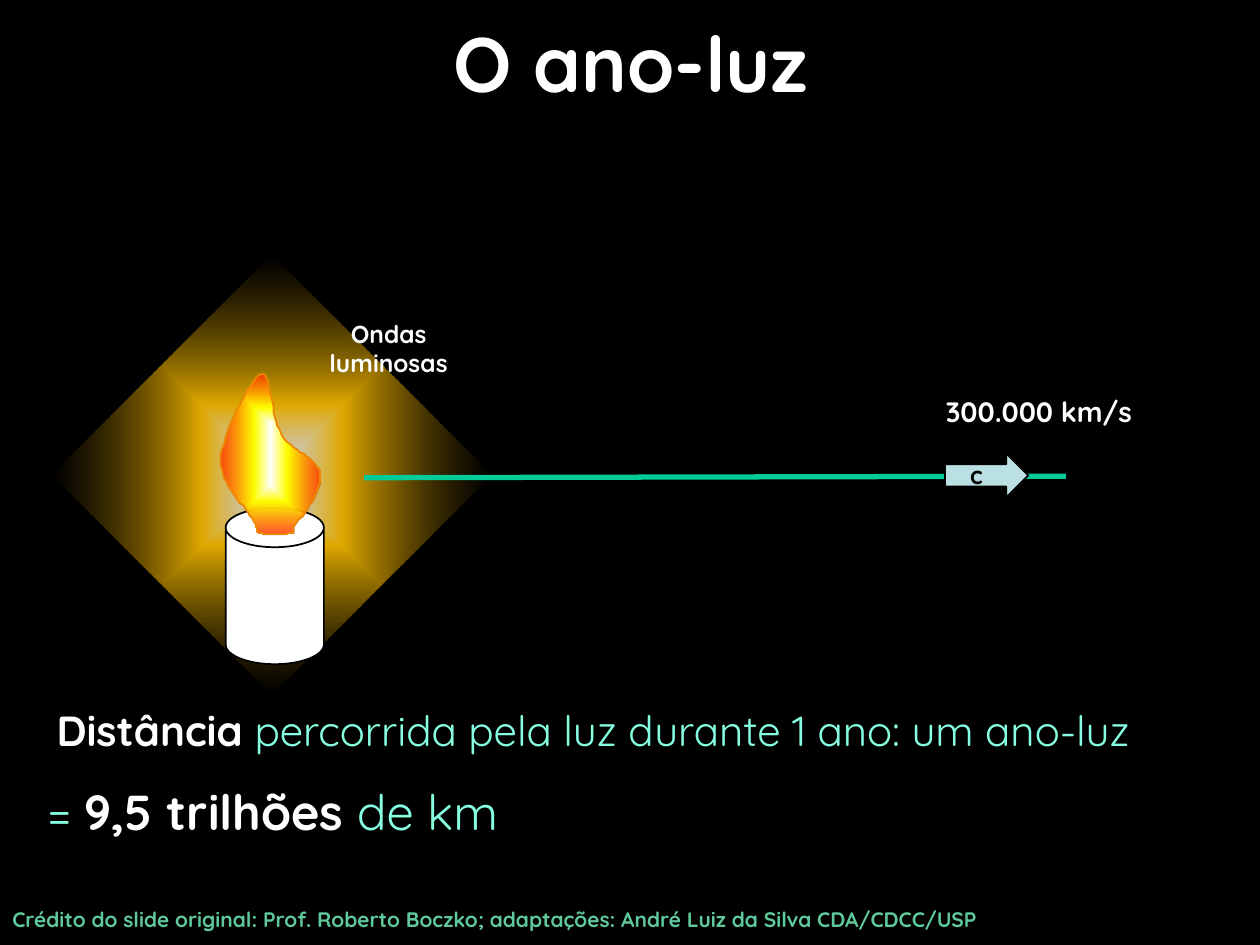
from lxml import etree
from pptx import Presentation
from pptx import util as u
from pptx.dml.color import RGBColor
from pptx.enum import shapes, text
from pptx.oxml import ns, parse_xml

THEME = dict(
    font="Quicksand", back="000000", white="FFFFFF", black="000000",
    mint="85FFE0", green="60C99C", ray="00CC99", arrow="BBE0E3", rim="EE8800",
    title=44, value=28, body=24, speed=16, label=14, credit=12,
)

# Text: box in cm, size, alignment, wrap, paragraphs of (words, colour, bold)
TEXTS = [
    ((0.28, 0.18, 24.89, 2.13), "title", "CENTER", True,
     [[("O ano-luz", "white", True)]]),
    ((6.35, 6.3, 2.97, 1.47), "label", "CENTER", False,
     [[("Ondas", "white", True)], [("luminosas", "white", True)]]),
    ((19.28, 9.14, 0.81, 0.86), "label", "CENTER", False,
     [[("c", "black", True)]]),
    ((18.82, 7.82, 4.62, 0.94), "speed", "LEFT", True,
     [[("300.000 km/s", "white", True)]]),
    ((0, 18.16, 25.4, 0.76), "credit", "LEFT", True,
     [[("Crédito do slide original: Prof. Roberto Boczko; adaptações: "
        "André Luiz da Silva CDA/CDCC/USP", "green", True)]]),
    ((0.89, 14.07, 23.47, 1.3), "body", "LEFT", True,
     [[("Distância ", "white", True),
       ("percorrida pela luz durante 1 ano: um ano-luz", "mint", False)]]),
    ((0.71, 15.62, 10.34, 1.45), "value", "LEFT", False,
     [[("= ", "mint", False), ("9,5 trilhões ", "white", True),
       ("de km", "mint", False)]]),
]

# Shapes: boxes in cm, gradient stops as (place, colour, opacity) in percent
GLOW = (2.34, 6.43, 6.27, 6.27)
GLOW_STOPS = [(7, "FFFFFF", 79), (32, "FFC000", 87), (100, "000000", 44)]
CANDLE = (4.55, 10.24, 1.98, 3.15)
ARROW = (19.05, 9.14, 1.68, 0.89)
RAY = (21.49, 9.6, 7.34, 9.63)
FLAME_STOPS = [(0, "FFFFFF", 100), (33, "FFFF00", 100), (100, "FF3300", 83)]

# Flame outline: start, then Bézier curves, in hundredths of an inch
UNIT = u.Cm(0.0254)
START = (233, 418)
CURVES = [
    ((245, 403), (256, 388), (254, 376)),
    ((253, 364), (230, 357), (223, 344)),
    ((215, 331), (215, 293), (207, 297)),
    ((199, 300), (176, 346), (175, 365)),
    ((174, 385), (196, 403), (201, 413)),
    ((207, 423), (201, 422), (207, 423)),
    ((212, 425), (223, 424), (233, 423)),
]
STEPS = 16


def rgb(name):
    return RGBColor.from_string(THEME[name])


def paint(shape, fill=None, line=None):
    shape.shadow.inherit = False
    if fill:
        shape.fill.solid()
        shape.fill.fore_color.rgb = rgb(fill)
    if line:
        shape.line.color.rgb = rgb(line)
        shape.line.width = u.Pt(1)
    else:
        shape.line.fill.background()


def blend(shape, stops, turn):
    """Fill from the centre outwards; turn says if it follows rotation."""
    shape.fill.background()
    old = shape.element.spPr.find(ns.qn("a:noFill"))
    marks = "".join(
        f'<a:gs pos="{p * 1000}"><a:srgbClr val="{c}">'
        f'<a:alpha val="{a * 1000}"/></a:srgbClr></a:gs>' for p, c, a in stops)
    new = parse_xml(
        f'<a:gradFill {ns.nsdecls("a")} rotWithShape="{turn}">'
        f'<a:gsLst>{marks}</a:gsLst><a:path path="shape"><a:fillToRect '
        'l="50000" t="50000" r="50000" b="50000"/></a:path></a:gradFill>')
    old.getparent().replace(old, new)


def add(slide, kind, box):
    return slide.shapes.add_shape(
        getattr(shapes.MSO_SHAPE, kind), *map(u.Cm, box))


def trace():
    last = START
    for a, b, end in CURVES:
        for i in range(1, STEPS + 1):
            t = i / STEPS
            s = 1 - t
            yield tuple(
                s**3 * p + 3 * s * s * t * q + 3 * s * t * t * r + t**3 * z
                for p, q, r, z in zip(last, a, b, end))
        last = end


def write(slide, box, size, align, wrap, paras):
    frame = slide.shapes.add_textbox(*map(u.Cm, box)).text_frame
    frame.word_wrap = wrap
    if size == "title":
        frame.vertical_anchor = text.MSO_ANCHOR.MIDDLE
    for i, runs in enumerate(paras):
        para = frame.add_paragraph() if i else frame.paragraphs[0]
        para.alignment = getattr(text.PP_ALIGN, align)
        for words, tint, bold in runs:
            run = para.add_run()
            run.text = words
            run.font.name = THEME["font"]
            run.font.size = u.Pt(THEME[size])
            run.font.bold = bold
            run.font.color.rgb = rgb(tint)


def main():
    deck = Presentation()
    deck.slide_width, deck.slide_height = u.Cm(25.4), u.Cm(19.05)
    slide = deck.slides.add_slide(deck.slide_layouts[6])
    slide.background.fill.solid()
    slide.background.fill.fore_color.rgb = rgb("back")

    # Glow
    glow = add(slide, "RECTANGLE", GLOW)
    glow.rotation = 225
    paint(glow)
    blend(glow, GLOW_STOPS, 0)

    # Candle and flame
    candle = add(slide, "CAN", CANDLE)
    candle.adjustments[0] = 0.4
    paint(candle, "white", "black")
    pen = slide.shapes.build_freeform(*START, scale=UNIT)
    pen.add_line_segments(list(trace()), close=True)
    flame = pen.convert_to_shape()
    paint(flame, line="rim")
    blend(flame, FLAME_STOPS, 1)

    # Light ray and arrow
    ray = slide.shapes.add_connector(
        shapes.MSO_CONNECTOR.STRAIGHT, *map(u.Cm, RAY))
    ray.line.color.rgb = rgb("ray")
    ray.line.width = u.Pt(3)
    etree.SubElement(ray.element.spPr, ns.qn("a:effectLst"))
    paint(add(slide, "RIGHT_ARROW", ARROW), "arrow", "black")

    # Words
    for item in TEXTS:
        write(slide, *item)
    deck.save("out.pptx")


if __name__ == "__main__":
    main()
